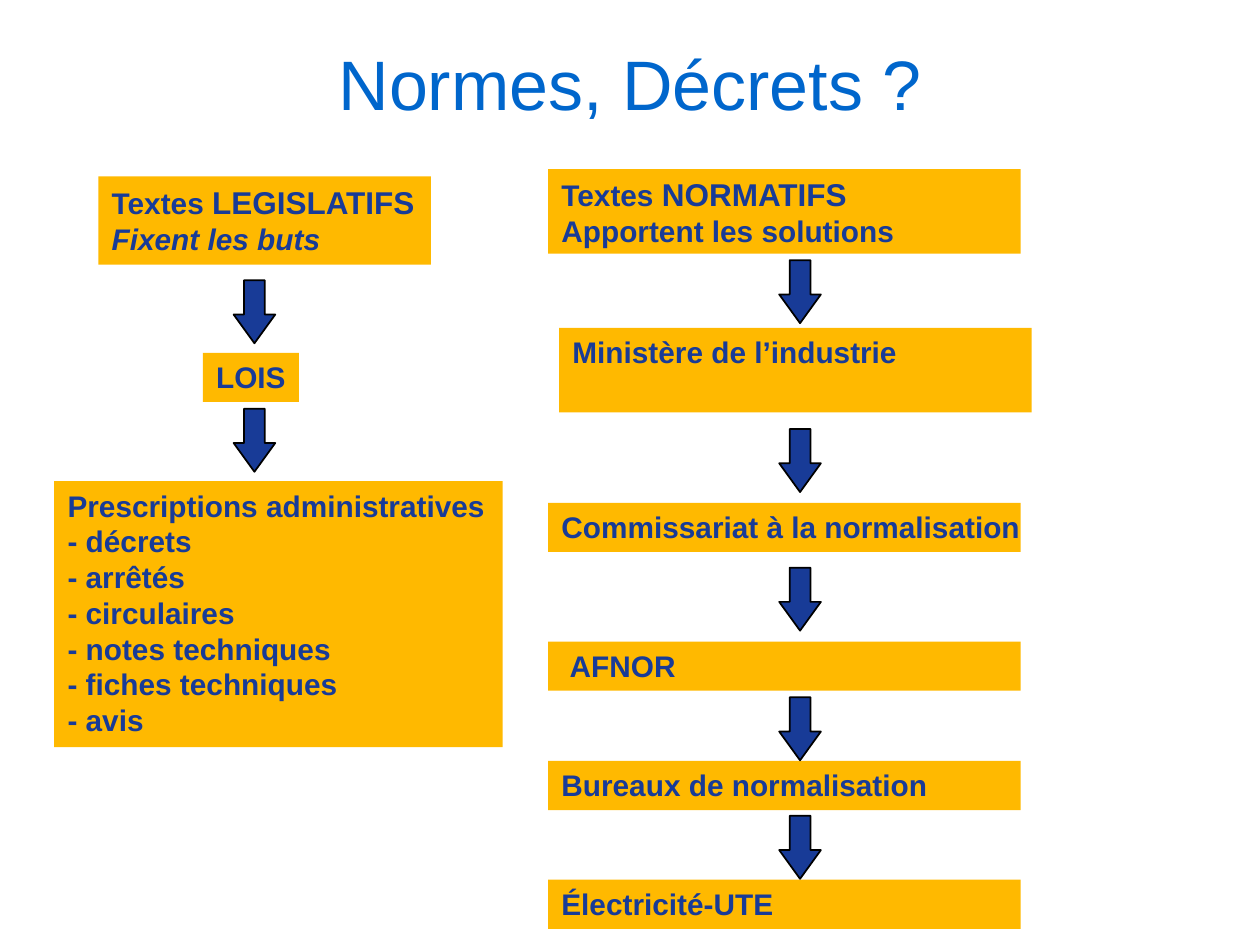
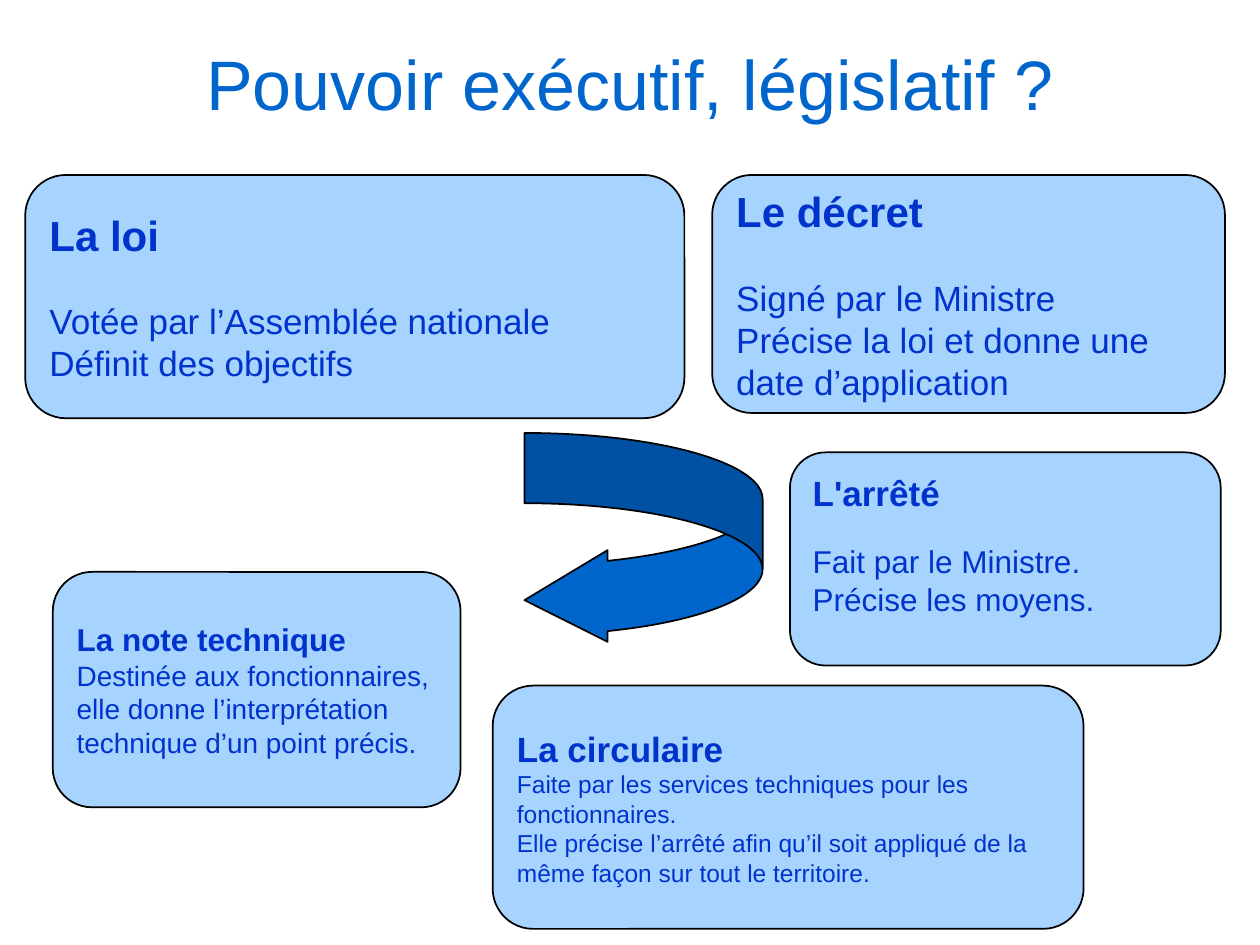
"""Build two slides on French regulations: the chain of standards and the hierarchy of legal texts."""
from typing import NamedTuple

from pptx import Presentation
from pptx.dml.color import RGBColor
from pptx.enum.shapes import MSO_SHAPE
from pptx.enum.text import MSO_ANCHOR, PP_ALIGN
from pptx.util import Pt

FONT = "Arial"
TITLE_BLUE = "0066CC"
BOX_ORANGE = "FFB900"
NAVY = "183B97"
CARD_BLUE = "A7D3FF"
CARD_TEXT = "0033CC"
BLACK = "000000"

BOX_SIZE = 17
BOX_INSET = 7.6
COLUMN_LEFT = 313.2
COLUMN_WIDTH = 270
ROW_HEIGHT = 28.1
ARROW_WIDTH = 23.8
ARROW_HEIGHT = 36
ARROW_TOPS = {
    145.4: (160.2, 233.6),
    457.2: (148.7, 245.2, 324.4, 398.5, 466.2),
}


class Frame(NamedTuple):
    left: float
    top: float
    width: float
    height: float


class Line(NamedTuple):
    pieces: tuple[tuple[str, float], ...]
    bold: bool = True
    italic: bool = False
    space_before: float = 0


class Box(NamedTuple):
    frame: Frame
    lines: tuple[Line, ...]
    indent: float = 0


class Card(NamedTuple):
    frame: Frame
    heading: str
    heading_size: float
    body: tuple[str, ...]
    body_size: float
    gap: float = 0
    bottom_inset: float = 3.6


def label(text: str, italic: bool = False) -> Line:
    return Line(((text, BOX_SIZE),), italic=italic)


def kind_of_text(kind: str) -> Line:
    return Line((("Textes ", BOX_SIZE), (kind, 18)))


def column_box(top: float, text: str, indent: float = 0) -> Box:
    return Box(Frame(COLUMN_LEFT, top, COLUMN_WIDTH, ROW_HEIGHT), (label(text),), indent)


BOXES = (
    Box(Frame(56.2, 100.8, 190, 50.4),
        (kind_of_text("LEGISLATIFS"), label("Fixent les buts", italic=True))),
    Box(Frame(115.9, 201.6, 54.9, ROW_HEIGHT), (label("LOIS"),)),
    Box(Frame(31, 275, 256.3, 151.9),
        tuple(label(text) for text in (
            "Prescriptions administratives", "- décrets", "- arrêtés", "- circulaires",
            "- notes techniques", "- fiches techniques", "- avis"))),
    Box(Frame(COLUMN_LEFT, 96.6, COLUMN_WIDTH, 48.4),
        (kind_of_text("NORMATIFS"), label("Apportent les solutions"))),
    Box(Frame(319.5, 187.3, COLUMN_WIDTH, 48.4), (label("Ministère de l’industrie"),)),
    column_box(287.3, "Commissariat à la normalisation"),
    column_box(366.6, "AFNOR", indent=4.7),
    column_box(434.8, "Bureaux de normalisation"),
    column_box(502.7, "Électricité-UTE"),
)

CARDS = (
    Card(Frame(14.4, 100, 376.7, 139), "La loi", 24,
         ("Votée par l’Assemblée nationale", "Définit des objectifs"), 20, gap=23),
    Card(Frame(407, 100, 293, 136), "Le décret", 24,
         ("Signé par le Ministre", "Précise la loi et donne une date d’application"), 20, gap=23),
    Card(Frame(451.4, 258.5, 246.2, 121.8), "L'arrêté", 20,
         ("Fait par le Ministre.", "Précise les moyens."), 18, gap=16.1, bottom_inset=19.7),
    Card(Frame(281.5, 391.8, 337.7, 139), "La circulaire", 20,
         ("Faite par les services techniques pour les fonctionnaires.",
          "Elle précise l’arrêté afin qu’il soit appliqué de la même façon sur tout le territoire."),
         14),
    Card(Frame(30.2, 326.8, 233, 134.5), "La note technique", 18,
         ("Destinée aux fonctionnaires, elle donne l’interprétation technique d’un point précis.",),
         16),
)


def color(hex_value: str) -> RGBColor:
    return RGBColor.from_string(hex_value)


def place(shape, frame: Frame) -> None:
    shape.left, shape.top, shape.width, shape.height = (Pt(length) for length in frame)


def add_filled_shape(slide, kind: MSO_SHAPE, frame: Frame, fill: str, outlined: bool = True):
    shape = slide.shapes.add_shape(kind, *(Pt(length) for length in frame))
    shape.shadow.inherit = False
    shape.fill.solid()
    shape.fill.fore_color.rgb = color(fill)
    if outlined:
        shape.line.color.rgb = color(BLACK)
        shape.line.width = Pt(1)
    else:
        shape.line.fill.background()
    return shape


def write_lines(text_frame, lines: tuple[Line, ...], text_color: str) -> None:
    for index, line in enumerate(lines):
        paragraph = text_frame.add_paragraph() if index else text_frame.paragraphs[0]
        paragraph.alignment = PP_ALIGN.LEFT
        if line.space_before:
            paragraph.space_before = Pt(line.space_before)
        font = paragraph.font
        font.name = FONT
        font.bold = line.bold
        font.italic = line.italic
        font.color.rgb = color(text_color)
        sizes = {size for _, size in line.pieces}
        if len(sizes) == 1:
            font.size = Pt(sizes.pop())
        for text, size in line.pieces:
            run = paragraph.add_run()
            run.text = text
            if font.size is None:
                run.font.size = Pt(size)


def add_box(slide, box: Box) -> None:
    shape = add_filled_shape(slide, MSO_SHAPE.RECTANGLE, box.frame, BOX_ORANGE, outlined=False)
    text_frame = shape.text_frame
    text_frame.word_wrap = False
    text_frame.vertical_anchor = MSO_ANCHOR.TOP
    text_frame.margin_left = Pt(BOX_INSET + box.indent)
    text_frame.margin_right = Pt(BOX_INSET)
    write_lines(text_frame, box.lines, NAVY)


def add_down_arrow(slide, center: float, top: float) -> None:
    frame = Frame(center - ARROW_WIDTH / 2, top, ARROW_WIDTH, ARROW_HEIGHT)
    arrow = add_filled_shape(slide, MSO_SHAPE.DOWN_ARROW, frame, NAVY)
    arrow.adjustments[0] = 0.5
    arrow.adjustments[1] = 0.69


def add_card(slide, card: Card) -> None:
    shape = add_filled_shape(slide, MSO_SHAPE.FLOWCHART_ALTERNATE_PROCESS, card.frame, CARD_BLUE)
    text_frame = shape.text_frame
    text_frame.word_wrap = True
    text_frame.vertical_anchor = MSO_ANCHOR.MIDDLE
    text_frame.margin_bottom = Pt(card.bottom_inset)
    heading = Line(((card.heading, card.heading_size),))
    body = tuple(
        Line(((text, card.body_size),), bold=False, space_before=0 if index else card.gap)
        for index, text in enumerate(card.body))
    write_lines(text_frame, (heading, *body), CARD_TEXT)


def add_titled_slide(presentation, title: str):
    slide = presentation.slides.add_slide(presentation.slide_layouts[5])
    shape = slide.shapes.title
    place(shape, Frame(36, 5.8, 648, 82.8))
    shape.text_frame.text = title
    shape.text_frame.vertical_anchor = MSO_ANCHOR.MIDDLE
    paragraph = shape.text_frame.paragraphs[0]
    paragraph.alignment = PP_ALIGN.CENTER
    paragraph.font.name = FONT
    paragraph.font.size = Pt(40)
    paragraph.font.color.rgb = color(TITLE_BLUE)
    return slide


def build_standards_slide(presentation) -> None:
    slide = add_titled_slide(presentation, "Normes, Décrets ?")
    for box in BOXES:
        add_box(slide, box)
    for center, tops in ARROW_TOPS.items():
        for top in tops:
            add_down_arrow(slide, center, top)


def build_powers_slide(presentation) -> None:
    slide = add_titled_slide(presentation, "Pouvoir exécutif, législatif ?")
    for card in CARDS:
        add_card(slide, card)
    turn = add_filled_shape(
        slide, MSO_SHAPE.CURVED_LEFT_ARROW, Frame(299.7, 247.4, 136.1, 121.7), TITLE_BLUE)
    for index, ratio in enumerate((0.33, 0.43, 0.39)):
        turn.adjustments[index] = ratio


def main() -> None:
    presentation = Presentation()
    presentation.slide_width = Pt(720)
    presentation.slide_height = Pt(540)
    build_standards_slide(presentation)
    build_powers_slide(presentation)
    presentation.save("out.pptx")


if __name__ == "__main__":
    main()
